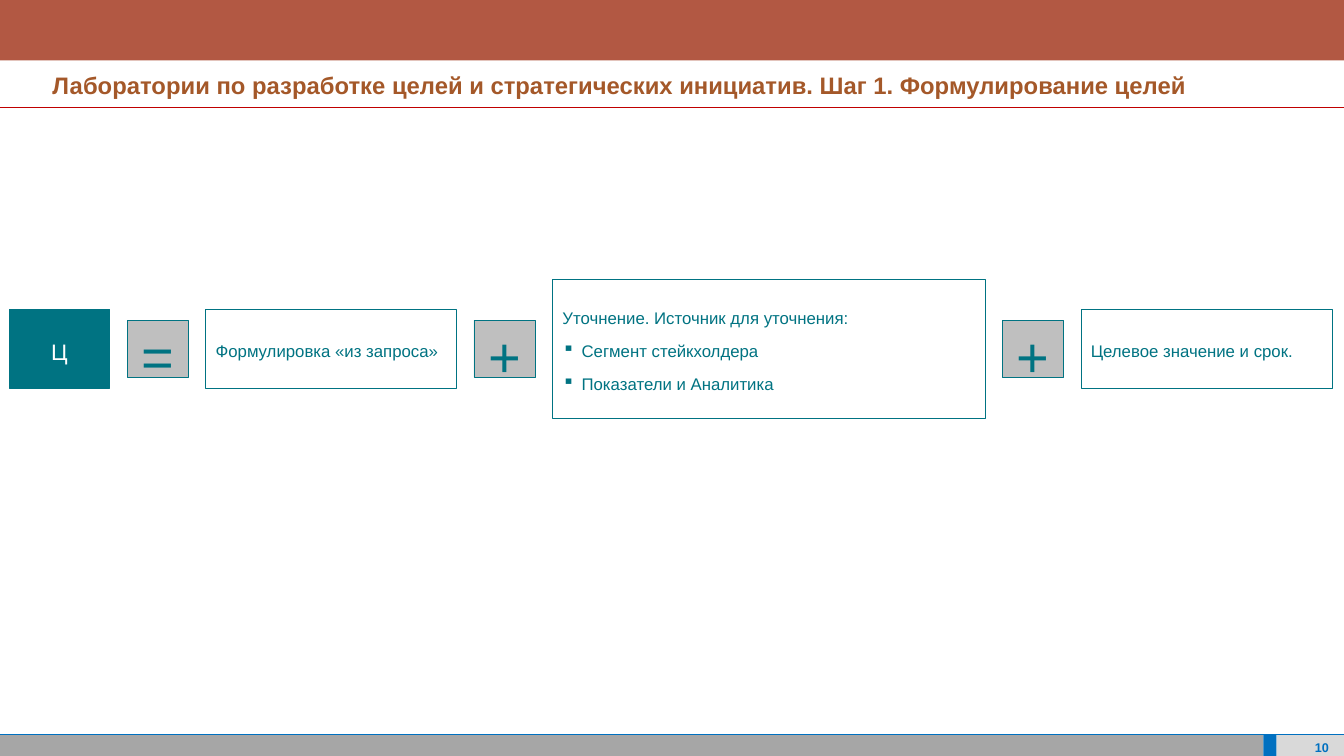
"""Builds the slide on formulating goals: a goal as a sum of three parts."""
from dataclasses import dataclass

from lxml.etree import SubElement
from pptx import Presentation
from pptx.dml.color import RGBColor
from pptx.enum.shapes import MSO_CONNECTOR as Connector, MSO_SHAPE as Shape
from pptx.enum.text import MSO_ANCHOR as Anchor, PP_ALIGN as Align
from pptx.oxml.ns import qn
from pptx.util import Inches, Pt

TITLE = "Лаборатории по разработке целей и стратегических инициатив. Шаг 1. Формулирование целей"
PAGE = "10"
FORMULA = [
    ("goal", ["Ц"], []),
    ("sign", ["="], []),
    ("part", ["Формулировка «из запроса»"], []),
    ("sign", ["+"], []),
    ("detail", ["Уточнение. Источник для уточнения:"],
     ["Сегмент стейкхолдера", "Показатели и Аналитика"]),
    ("sign", ["+"], []),
    ("part", ["Целевое значение и срок."], []),
]


@dataclass(frozen=True)
class Theme:
    """Colours, font and type sizes."""
    font: str = "Arial"
    teal: str = "007382"
    white: str = "FFFFFF"
    sign_fill: str = "BFBFBF"
    banner: str = "B25843"
    title: str = "A45829"
    rule: str = "C00000"
    blue: str = "0070C0"
    footer: str = "A6A6A6"
    page_fill: str = "D9D9D9"
    title_size: int = 17
    page_size: int = 9
    goal_size: int = 16
    sign_size: int = 40
    body_size: int = 12


THEME = Theme()
WIDTH, HEIGHT = 13.33, 7.5
FOOTER_TOP, TITLE_TOP, TITLE_BOTTOM = 7.29, 0.6, 1.07
FORMULA_LEFT, FORMULA_MIDDLE, GAP = 0.09, 3.46, 0.17
BULLET_INDENT = Inches(0.19)
STYLES = {
    "goal": (1.0, 0.78, THEME.teal, THEME.white, THEME.goal_size, Align.CENTER),
    "sign": (0.61, 0.57, THEME.sign_fill, THEME.teal, THEME.sign_size, Align.CENTER),
    "part": (2.49, 0.78, THEME.white, THEME.teal, THEME.body_size, Align.LEFT),
    "detail": (4.29, 1.38, THEME.white, THEME.teal, THEME.body_size, Align.LEFT),
}


def rgb(colour):
    return RGBColor.from_string(colour)


def add_box(slide, left, top, width, height, fill, outline=None):
    box = slide.shapes.add_shape(
        Shape.RECTANGLE, Inches(left), Inches(top), Inches(width), Inches(height))
    box.shadow.inherit = False
    box.fill.solid()
    box.fill.fore_color.rgb = rgb(fill)
    if outline:
        box.line.color.rgb = rgb(outline)
        box.line.width = Pt(0.5)
    else:
        box.line.fill.background()
    return box


def add_rule(slide, top, colour):
    rule = slide.shapes.add_connector(
        Connector.STRAIGHT, 0, Inches(top), Inches(WIDTH), Inches(top))
    rule.line.color.rgb = rgb(colour)
    rule.line.width = Pt(0.5)
    SubElement(rule._element.spPr, qn("a:effectLst"))


def write(frame, lines, size, colour, align, bold=False, after=6, bullets=()):
    frame.word_wrap = True
    frame.vertical_anchor = Anchor.MIDDLE
    for index, line in enumerate([*lines, *bullets]):
        paragraph = frame.add_paragraph() if index else frame.paragraphs[0]
        paragraph.text = line
        paragraph.alignment = align
        paragraph.line_spacing = 1.2
        paragraph.space_after = Pt(after)
        if index >= len(lines):
            properties = paragraph._p.get_or_add_pPr()
            properties.set("marL", str(BULLET_INDENT))
            properties.set("indent", str(-BULLET_INDENT))
            SubElement(properties, qn("a:buChar"), char="▪")
        font = paragraph.font
        font.name, font.size, font.bold = THEME.font, Pt(size), bold
        font.color.rgb = rgb(colour)


def add_label(slide, place, insets, text, size, colour, align):
    label = slide.shapes.add_textbox(*map(Inches, place))
    frame = label.text_frame
    (frame.margin_left, frame.margin_top,
     frame.margin_right, frame.margin_bottom) = map(Inches, insets)
    write(frame, [text], size, colour, align, bold=True, after=8)


def add_frame(slide):
    footer_height = HEIGHT - FOOTER_TOP
    for left, right, fill in [(0, 12.53, THEME.footer), (12.66, WIDTH, THEME.page_fill),
                              (12.53, 12.66, THEME.blue)]:
        add_box(slide, left, FOOTER_TOP, right - left, footer_height, fill)
    add_label(slide, (12.76, 7.32, 0.58, 0.16), (0.12, 0, 0.16, 0),
              PAGE, THEME.page_size, THEME.blue, Align.RIGHT)
    add_rule(slide, FOOTER_TOP, THEME.blue)
    add_box(slide, 0, 0, WIDTH, TITLE_TOP, THEME.banner)
    add_rule(slide, TITLE_BOTTOM, THEME.rule)
    add_label(slide, (0.28, TITLE_TOP, 13.05, TITLE_BOTTOM - TITLE_TOP),
              (0.24, 0.04, 0.16, 0.08), TITLE, THEME.title_size, THEME.title, Align.JUSTIFY)


def add_formula(slide):
    left = FORMULA_LEFT
    for kind, lines, bullets in FORMULA:
        width, height, fill, colour, size, align = STYLES[kind]
        term = add_box(slide, left, FORMULA_MIDDLE - height / 2, width, height,
                       fill, THEME.teal)
        write(term.text_frame, lines, size, colour, align, bullets=bullets)
        left += width + GAP


def main():
    deck = Presentation()
    deck.slide_width, deck.slide_height = Inches(WIDTH), Inches(HEIGHT)
    slide = deck.slides.add_slide(deck.slide_layouts[6])
    add_frame(slide)
    add_formula(slide)
    deck.save("out.pptx")


if __name__ == "__main__":
    main()
